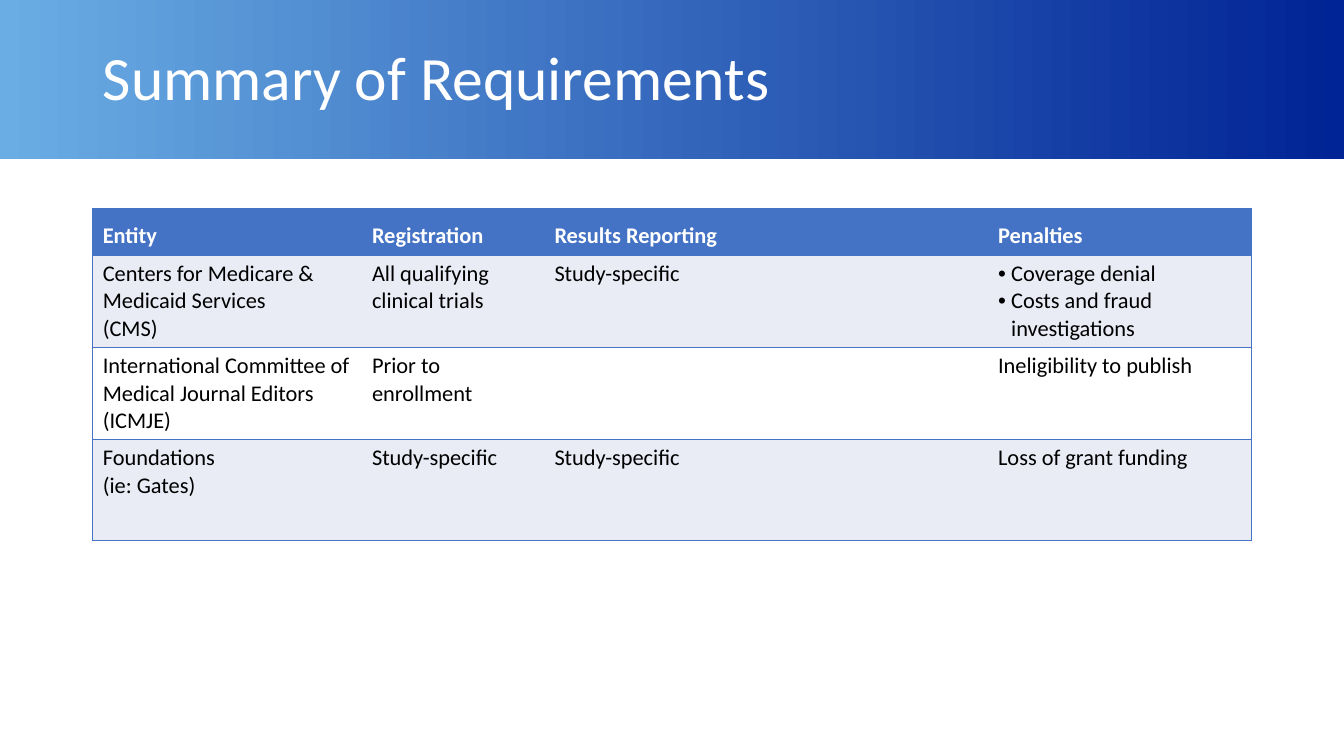
from lxml import etree
from pptx import Presentation
from pptx import util as u
from pptx.dml.color import RGBColor
from pptx.enum import shapes, text
from pptx.oxml.ns import qn

BLUE, BAND, WHITE, BLACK = "4472C4", "E9EBF5", "FFFFFF", "000000"


def color(value):
    return RGBColor.from_string(value)


def add_border(cell, side, line_color):
    properties = cell._tc.get_or_add_tcPr()
    line = etree.SubElement(properties, qn(f"a:ln{side}"), w=str(u.Pt(1)))
    if line_color is None:
        etree.SubElement(line, qn("a:noFill"))
    else:
        fill = etree.SubElement(line, qn("a:solidFill"))
        etree.SubElement(fill, qn("a:srgbClr"), val=line_color)


presentation = Presentation()
presentation.slide_width = u.Inches(13.33)
presentation.slide_height = u.Inches(7.5)
slide = presentation.slides.add_slide(presentation.slide_layouts[5])

# Gradient header band, behind the title
band = slide.shapes.add_shape(
    shapes.MSO_SHAPE.RECTANGLE, 0, 0, presentation.slide_width, u.Inches(1.58)
)
band.shadow.inherit = False
band.line.fill.background()
band.fill.gradient()
band.fill.gradient_angle = 0
for stop, position, value in zip(band.fill.gradient_stops, (0, 1), ("6AADE4", "002395")):
    stop.position = position
    stop.color.rgb = color(value)
slide.shapes._spTree.insert(2, band._element)

# Title
title = slide.shapes.title
title.left, title.top = u.Inches(0.92), u.Inches(0.07)
title.width, title.height = u.Inches(11.5), u.Inches(1.45)
title.text_frame.text = "Summary of Requirements"
title.text_frame.vertical_anchor = text.MSO_ANCHOR.MIDDLE
paragraph = title.text_frame.paragraphs[0]
paragraph.alignment = text.PP_ALIGN.LEFT
paragraph.line_spacing = 0.9
for name, value in {"name": "Calibri", "size": u.Pt(44)}.items():
    setattr(paragraph.font, name, value)
paragraph.font.color.rgb = color(WHITE)

# Requirements table
rows = [
    ["Entity", "Registration", "Results Reporting", "Penalties"],
    ["Centers for Medicare & Medicaid Services\n(CMS)", "All qualifying clinical trials",
     "Study-specific", "Coverage denial\nCosts and fraud investigations"],
    ["International Committee of Medical Journal Editors (ICMJE)", "Prior to enrollment",
     "", "Ineligibility to publish"],
    ["Foundations\n(ie: Gates)", "Study-specific", "Study-specific", "Loss of grant funding"],
]
column_widths = [2.67, 1.81, 4.4, 2.61]
row_heights = [0.46, 0.91, 0.91, 1]
last_column = len(column_widths) - 1
table = slide.shapes.add_table(
    len(rows), len(column_widths), u.Inches(0.92), u.Inches(2.07),
    u.Inches(sum(column_widths)), u.Inches(sum(row_heights)),
).table
for column, width in zip(table.columns, column_widths):
    column.width = u.Inches(width)
for row, height in zip(table.rows, row_heights):
    row.height = u.Inches(height)

for row_index, row in enumerate(rows):
    header = row_index == 0
    fill_color = BLUE if header else BAND if row_index % 2 else WHITE
    for column_index, content in enumerate(row):
        cell = table.cell(row_index, column_index)
        add_border(cell, "L", BLUE if column_index == 0 else None)
        add_border(cell, "R", BLUE if column_index == last_column else None)
        add_border(cell, "T", BLUE)
        add_border(cell, "B", BLUE)
        cell.fill.solid()
        cell.fill.fore_color.rgb = color(fill_color)
        cell.vertical_anchor = text.MSO_ANCHOR.BOTTOM if header else text.MSO_ANCHOR.TOP
        cell.text = content
        bulleted = column_index == last_column and "\n" in content
        for paragraph in cell.text_frame.paragraphs:
            if bulleted:
                properties = paragraph._p.get_or_add_pPr()
                properties.set("marL", str(u.Inches(0.13)))
                properties.set("indent", str(u.Inches(-0.13)))
                etree.SubElement(properties, qn("a:buFont"), typeface="Arial")
                etree.SubElement(properties, qn("a:buChar"), char="•")
            font_format = {"name": "Calibri", "size": u.Pt(16), "bold": header}
            for name, value in font_format.items():
                setattr(paragraph.font, name, value)
            paragraph.font.color.rgb = color(WHITE if header else BLACK)

presentation.save("out.pptx")
